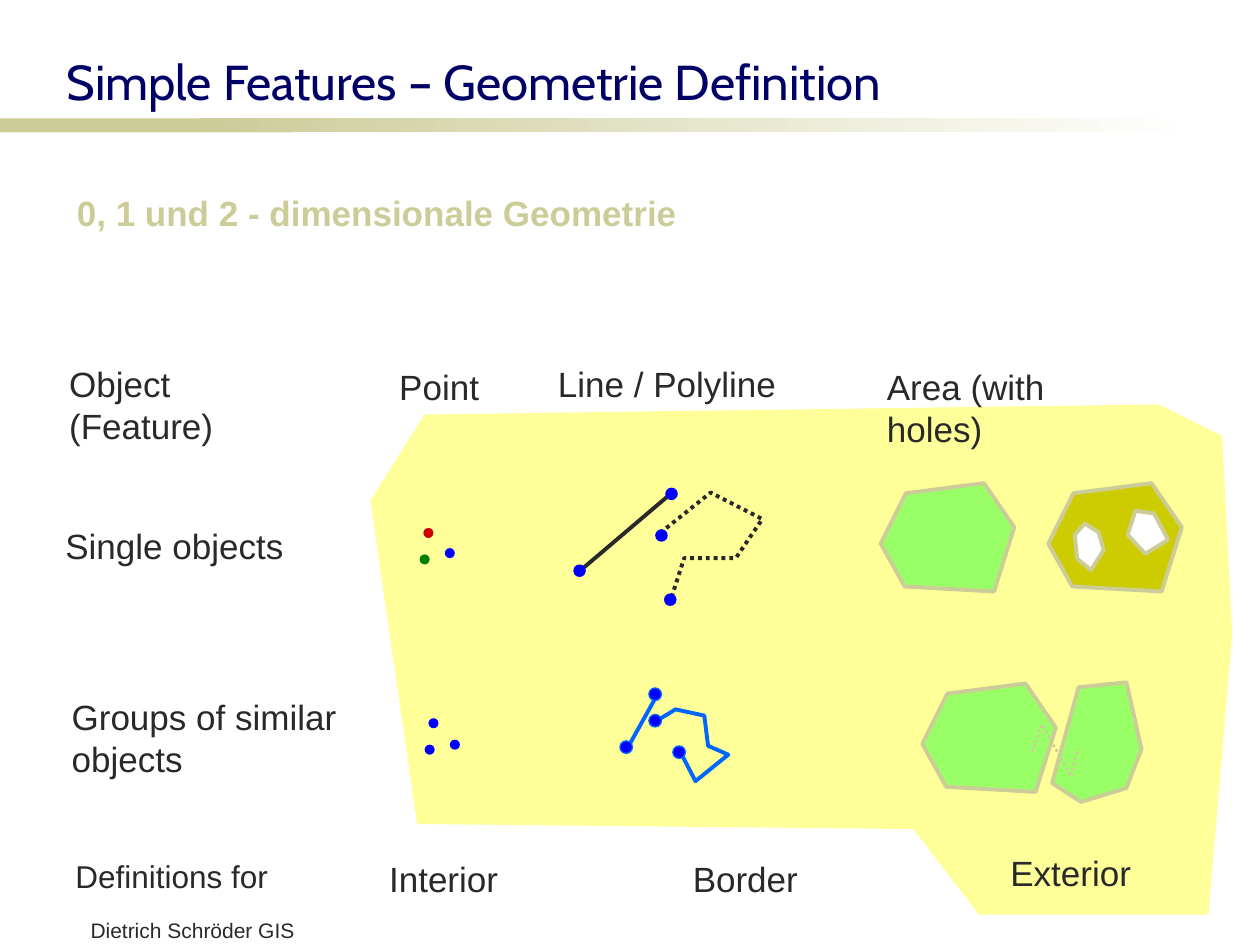
from dataclasses import dataclass

from pptx import Presentation
from pptx import util as u
from pptx.dml.color import RGBColor
from pptx.enum import dml, shapes, text
from pptx.oxml.ns import qn
from lxml import etree

INK = RGBColor(0x29, 0x29, 0x29)
NAVY = RGBColor(0x00, 0x00, 0x66)
SAND = RGBColor(0xCC, 0xCC, 0x99)
WHITE = RGBColor(0xFF, 0xFF, 0xFF)
YELLOW = RGBColor(0xFF, 0xFF, 0x99)
LIME = RGBColor(0x99, 0xFF, 0x66)
OLIVE = RGBColor(0xCC, 0xCC, 0x00)
BLUE = RGBColor(0x00, 0x00, 0xFF)
AZURE = RGBColor(0x00, 0x66, 0xFF)
RED = RGBColor(0xCC, 0x00, 0x00)
GREEN = RGBColor(0x00, 0x80, 0x00)

# The slide is a grid of 100 columns by 75 rows of square cells
COLUMNS, ROWS = 100, 75
CELL = u.Inches(10) // COLUMNS

Point = tuple[float, float]


@dataclass
class Label:
    words: str
    x: float
    y: float
    w: float
    h: float = 4.3
    size: int = 20
    wrap: bool = False
    fill: RGBColor | None = None


@dataclass
class Area:
    points: list[Point]
    fill: RGBColor


@dataclass
class Dot:
    x: float
    y: float
    size: float
    fill: RGBColor = BLUE
    line: RGBColor | None = None


def cells(*values: float) -> list[int]:
    return [round(v * CELL) for v in values]


def paint(sp, fill: RGBColor | None = None, line: RGBColor | None = None,
          width: float = 2.25, dotted: bool = False) -> None:
    sp.shadow.inherit = False
    if fill is None:
        sp.fill.background()
    else:
        sp.fill.solid()
        sp.fill.fore_color.rgb = fill
    if line is None:
        sp.line.fill.background()
        return
    sp.line.color.rgb = line
    sp.line.width = u.Pt(width)
    if dotted:
        sp.line.dash_style = dml.MSO_LINE.ROUND_DOT


def draw_path(s, points: list[Point], closed: bool = True, **style) -> None:
    first, *rest = [tuple(cells(*p)) for p in points]
    builder = s.shapes.build_freeform(*first)
    builder.add_line_segments(rest, close=closed)
    paint(builder.convert_to_shape(), **style)


def draw_line(s, start: Point, end: Point, color: RGBColor) -> None:
    line = s.shapes.add_connector(shapes.MSO_CONNECTOR.STRAIGHT, *cells(*start, *end))
    line.line.color.rgb = color
    line.line.width = u.Pt(2.25)
    etree.SubElement(line._element.spPr, qn("a:effectLst"))


def draw_dot(s, dot: Dot) -> None:
    sp = s.shapes.add_shape(shapes.MSO_SHAPE.OVAL, *cells(dot.x, dot.y, dot.size, dot.size))
    paint(sp, dot.fill, dot.line, 0.75)


def write(sp, words: str, size: int, color: RGBColor, font: str = "Arial",
          bold: bool = False, wrap: bool = True) -> None:
    tf = sp.text_frame
    tf.word_wrap = wrap
    tf.auto_size = text.MSO_AUTO_SIZE.NONE
    tf.vertical_anchor = text.MSO_ANCHOR.TOP
    p = tf.paragraphs[0]
    p.text = words
    p.alignment = text.PP_ALIGN.LEFT
    p.space_before = u.Pt(0)
    p.font.size, p.font.name, p.font.bold = u.Pt(size), font, bold
    p.font.color.rgb = color


def draw_label(s, label: Label) -> None:
    sp = s.shapes.add_textbox(*cells(label.x, label.y, label.w, label.h))
    if label.fill is not None:
        sp.fill.solid()
        sp.fill.fore_color.rgb = label.fill
    write(sp, label.words, label.size, INK, wrap=label.wrap)


def move(sp, x: float, y: float, w: float, h: float) -> None:
    sp.left, sp.top, sp.width, sp.height = cells(x, y, w, h)


def hexagon(x: float, y: float) -> list[Point]:
    corners = [(2, 0.8), (8.2, 0), (10.6, 3.5), (9, 8.6), (1.9, 8.2), (0, 4.8)]
    return [(x + dx, y + dy) for dx, dy in corners]


EXTERIOR = [(33.7, 32.9), (29.4, 39.7), (33.1, 65.4), (72.5, 65.8), (77.7, 72.6),
            (95.9, 72.6), (97.8, 50.3), (97, 34.6), (92, 32.1)]
AREAS = [
    Area(hexagon(70, 38.3), LIME),
    Area(hexagon(83.3, 38.3), OLIVE),
    Area([(91.7, 40.7), (90.2, 40.5), (89.6, 42.4), (91, 43.9), (92.8, 42.8)], WHITE),
    Area([(87.3, 42.2), (86.2, 41.5), (85.4, 42.4), (85.6, 44.3), (86.7, 45.2),
          (87.7, 43.6)], WHITE),
    Area(hexagon(73.3, 54.2), LIME),
    Area([(85.7, 54.5), (89.5, 54.1), (90.7, 59.4), (89.5, 62.5), (85.9, 63.6),
          (83.6, 62.1)], LIME),
]
ZIGZAG = [(81.9, 59.7), (82.7, 57.5), (85, 61.6), (85.6, 59.4)]
DOTTED_POLYLINE = [(53.3, 47.4), (54.3, 44.3), (58.4, 44.3), (60.5, 41.2),
                   (56.4, 39.1), (52.4, 42.3)]
BLUE_POLYLINE = [(52.3, 57.1), (53.3, 56.5), (53.6, 56.3), (55.9, 56.8), (56.2, 59.2),
                 (57.8, 59.9), (55.2, 62), (53.9, 59.5)]
DOTS = [
    *[Dot(x, y, 0.8) for x, y in [(34, 57), (35.7, 58.7), (33.7, 59.1), (35.3, 43.5)]],
    Dot(33.6, 41.9, 0.8, RED),
    Dot(33.3, 44, 0.8, GREEN),
    *[Dot(x, y, 1) for x, y in [(52.7, 47.1), (52, 42), (45.5, 44.8), (52.8, 38.7)]],
    *[Dot(x, y, 1, line=AZURE)
      for x, y in [(49.2, 58.8), (51.5, 54.6), (53.4, 59.2), (51.5, 56.7)]],
]
LABELS = [
    Label("Dietrich Schröder GIS", 6.2, 72.3, 20.8, 2.7, 12),
    Label("Exterior", 79.2, 67.1, 11.6, fill=YELLOW),
    Label("Area (with holes)", 69.4, 28.5, 22, wrap=True),
    Label("Line / Polyline", 43.3, 28.3, 19.3),
    Label("Single objects", 4.2, 41.1, 20.7),
    Label("Groups of similar objects", 4.7, 54.7, 29.5, 7.7, wrap=True),
    Label("Object (Feature)", 4.5, 28.3, 21.5, wrap=True),
    Label("Definitions for", 5, 67.5, 20.8, 4, 18),
    Label("Point", 30.7, 28.5, 8.4),
    Label("Border", 54, 67.6, 10.3),
    Label("Interior", 29.9, 67.6, 10.6),
]


def main() -> None:
    prs = Presentation()
    prs.slide_width, prs.slide_height = CELL * COLUMNS, CELL * ROWS
    s = prs.slides.add_slide(prs.slide_layouts[1])

    # Title and subtitle
    title, body = s.placeholders
    move(title, 4.3, 3.6, 80.3, 5.7)
    write(title, "Simple Features – Geometrie Definition", 28, NAVY, "Cabin")
    move(body, 5.1, 14.7, 53, 4.3)
    write(body, "0, 1 und 2 - dimensionale Geometrie", 20, SAND, bold=True)
    pPr = body.text_frame.paragraphs[0]._p.get_or_add_pPr()
    pPr.set("marL", "0")
    pPr.set("indent", "0")
    pPr.insert_element_before(etree.Element(qn("a:buNone")), "a:tabLst", "a:defRPr")

    # Rule below the title, fading to white
    bars = [s.shapes.add_shape(shapes.MSO_SHAPE.RECTANGLE, *cells(x, 9.4, w, 1.1))
            for x, w in [(0, 23.3), (15.8, 79.2)]]
    for bar in bars:
        paint(bar, SAND)
    fade = bars[1].fill
    fade.gradient()
    fade.gradient_angle = 0
    for stop, color in zip(fade.gradient_stops, (SAND, WHITE)):
        stop.color.rgb = color

    # Exterior and area interiors
    draw_path(s, EXTERIOR, fill=YELLOW)
    for area in AREAS:
        draw_path(s, area.points, fill=area.fill)
    draw_path(s, ZIGZAG, closed=False, line=SAND, width=1.5, dotted=True)

    # Lines and polylines
    draw_line(s, (45.8, 45.5), (53.1, 39.3), INK)
    draw_path(s, DOTTED_POLYLINE, closed=False, line=INK, dotted=True)
    draw_line(s, (49.9, 59.2), (52.3, 54.9), AZURE)
    draw_path(s, BLUE_POLYLINE, closed=False, line=AZURE)

    # Points, area borders and labels
    for dot in DOTS:
        draw_dot(s, dot)
    for area in AREAS:
        draw_path(s, [(x - 0.1, y + 0.05) for x, y in area.points], line=SAND)
    for label in LABELS:
        draw_label(s, label)

    prs.save("out.pptx")


if __name__ == "__main__":
    main()
